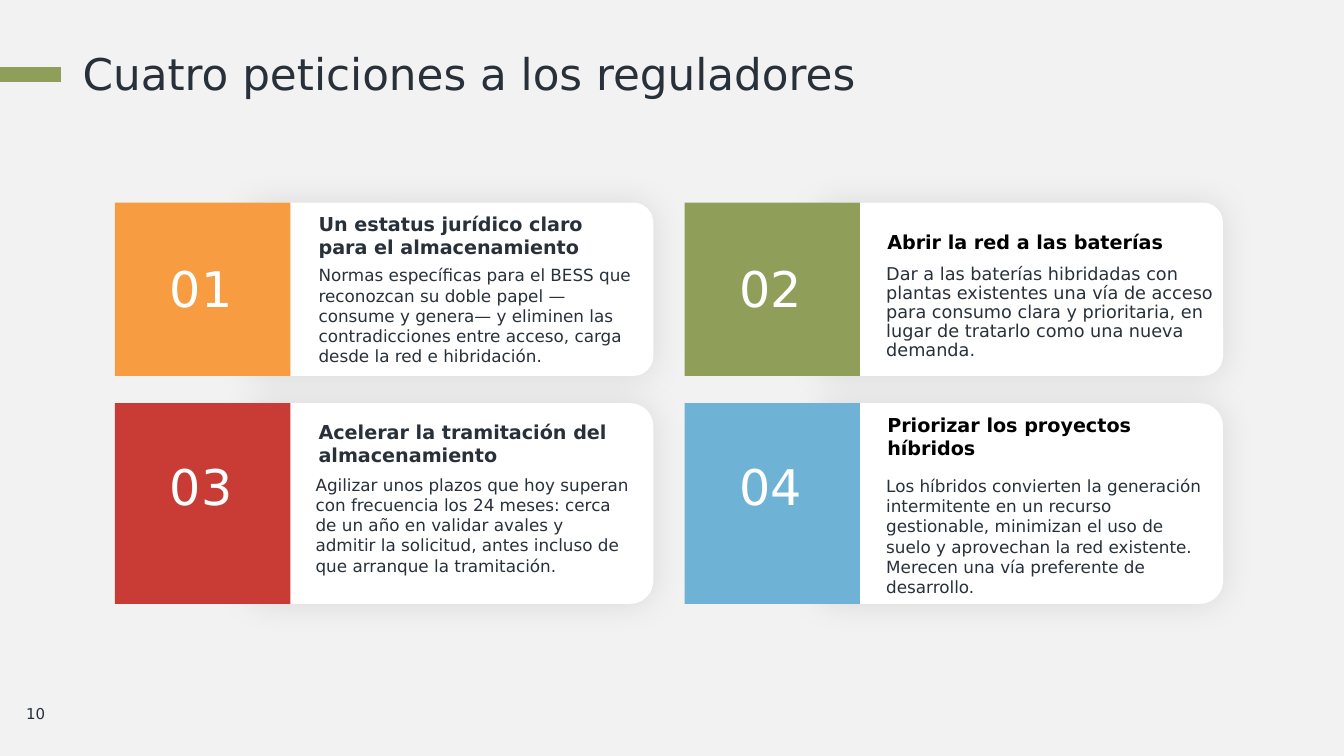
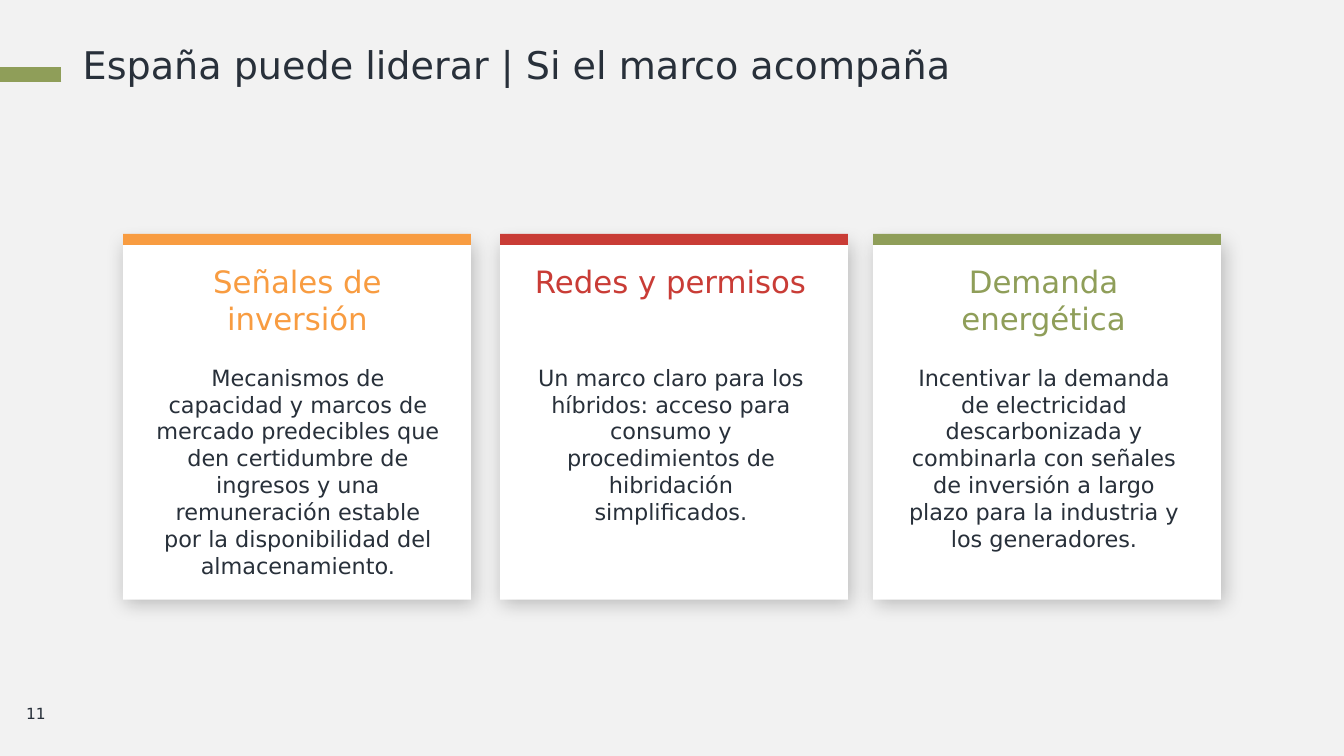
import pptx
import pptx.util
import pptx.dml.color
import pptx.enum.shapes
import pptx.enum.text
import pptx.oxml

Inches = pptx.util.Inches
Kind = pptx.enum.shapes.MSO_SHAPE
Align = pptx.enum.text.PP_ALIGN
Anchor = pptx.enum.text.MSO_ANCHOR

# Shared look
FACE = "DejaVu Sans"
HUES = {
    "back": "F2F2F2", "ink": "28303A", "black": "000000", "white": "FFFFFF",
    "orange": "F89C41", "red": "C93C36", "green": "8F9E59", "blue": "6EB3D6",
}
# Shadows: opacity %, blur pt, distance pt, angle in degrees
GLOW = (9, 23.9, 0, 0)
DROP = (23, 14, 3, 53)

# Content: title, title size, line spacing, page, page size
ASKS_TOP = ("Cuatro peticiones a los reguladores", 31.2, 1.0, "10", 10.7)
LEAD_TOP = ("España puede liderar | Si el marco acompaña", 27.2, 0.9, "11", 11)

# Requests, column by column; boxes are (offset from column, top, width, height)
ASKS = [
    {"num": "01", "hue": "orange", "col": 0, "row": 0,
     "head": "Un estatus jurídico claro para el almacenamiento",
     "head_box": (2.02, 2.11, 3.12, 0.48), "head_fmt": {},
     "body": "Normas específicas para el BESS que reconozcan su doble papel "
             "—consume y genera— y eliminen las contradicciones entre acceso, "
             "carga desde la red e hibridación.",
     "body_box": (2.02, 2.63, 3.18, 1.02), "body_fmt": {}},
    {"num": "03", "hue": "red", "col": 0, "row": 1,
     "head": "Acelerar la tramitación del almacenamiento",
     "head_box": (2.02, 4.1, 3.12, 0.59), "head_fmt": {"anchor": Anchor.MIDDLE},
     "body": "Agilizar unos plazos que hoy superan con frecuencia los 24 meses: "
             "cerca de un año en validar avales y admitir la solicitud, antes "
             "incluso de que arranque la tramitación.",
     "body_box": (1.99, 4.71, 3.11, 0.73), "body_fmt": {}},
    {"num": "02", "hue": "green", "col": 1, "row": 0,
     "head": "Abrir la red a las baterías",
     "head_box": (2.01, 2.29, 3.12, 0.27), "head_fmt": {"hue": "black"},
     "body": "Dar a las baterías hibridadas con plantas existentes una vía de "
             "acceso para consumo clara y prioritaria, en lugar de tratarlo "
             "como una nueva demanda.",
     "body_box": (2, 2.63, 3.26, 0.98), "body_fmt": {"size": 12.6, "gap": 0.9}},
    {"num": "04", "hue": "blue", "col": 1, "row": 1,
     "head": "Priorizar los proyectos híbridos",
     "head_box": (2.01, 4.1, 3.12, 0.86), "head_fmt": {"hue": "black"},
     "body": "Los híbridos convierten la generación intermitente en un recurso "
             "gestionable, minimizan el uso de suelo y aprovechan la red "
             "existente. Merecen una vía preferente de desarrollo.",
     "body_box": (2, 4.72, 3.13, 0.73), "body_fmt": {}},
]
COLS = (1.14, 6.79)
ROWS = ((2.01, 1.72, 2.46), (4, 1.99, 4.42))  # top, height, number top

# Pillars: card left, hue, heading, body
LEADS = [
    (1.22, "orange", "Señales de inversión",
     "Mecanismos de capacidad y marcos de mercado predecibles que den "
     "certidumbre de ingresos y una remuneración estable por la "
     "disponibilidad del almacenamiento."),
    (4.96, "red", "Redes y permisos",
     "Un marco claro para los híbridos: acceso para consumo y "
     "procedimientos de hibridación simplificados."),
    (8.66, "green", "Demanda energética",
     "Incentivar la demanda de electricidad descarbonizada y combinarla con "
     "señales de inversión a largo plazo para la industria y los generadores."),
]


def tint(name):
    return pptx.dml.color.RGBColor.from_string(HUES[name])


def node(xml):
    space = 'xmlns:a="http://schemas.openxmlformats.org/drawingml/2006/main"'
    return pptx.oxml.parse_xml(xml.replace(" ", f" {space} ", 1))


def write(slide, box, text, size, hue="ink", bold=False, align=None,
          anchor=Anchor.TOP, gap=None, inset=(0, 0)):
    frame = slide.shapes.add_textbox(*map(Inches, box)).text_frame
    across, down = map(Inches, inset)
    look = {"word_wrap": True, "vertical_anchor": anchor,
            "margin_left": across, "margin_right": across,
            "margin_top": down, "margin_bottom": down}
    for key, value in look.items():
        setattr(frame, key, value)
    para = frame.paragraphs[0]
    para.alignment = align
    para.line_spacing = gap
    run = para.add_run()
    run.text = text
    style = {"name": FACE, "size": pptx.util.Pt(size), "bold": bold}
    for key, value in style.items():
        setattr(run.font, key, value)
    run.font.color.rgb = tint(hue)


def block(slide, box, hue, kind=Kind.RECTANGLE, shade=None):
    shape = slide.shapes.add_shape(kind, *map(Inches, box))
    shape.shadow.inherit = False
    shape.fill.solid()
    shape.fill.fore_color.rgb = tint(hue)
    shape.line.fill.background()
    if shade:
        alpha, blur, dist, angle = shade
        effects = shape._element.spPr.find(pptx.oxml.ns.qn("a:effectLst"))
        effects.append(node(
            f'<a:outerShdw blurRad="{pptx.util.Pt(blur)}" '
            f'dist="{pptx.util.Pt(dist)}" dir="{angle * 60000}" '
            f'algn="ctr" rotWithShape="0"><a:srgbClr val="{HUES["black"]}">'
            f'<a:alpha val="{alpha * 1000}"/></a:srgbClr></a:outerShdw>'))
    return shape


def start(prs, title, size, gap, page, small):
    slide = prs.slides.add_slide(prs.slide_layouts[6])
    write(slide, (0.82, 0.46, 11.71, 0.54), title, size, gap=gap)
    # Accent bar at the left edge
    bar = slide.shapes.add_connector(
        pptx.enum.shapes.MSO_CONNECTOR.STRAIGHT,
        *map(Inches, (0.61, 0.74, 0, 0.74)))
    bar.line.color.rgb = tint("green")
    bar.line.width = pptx.util.Pt(10.25)
    bar._element.spPr.append(node("<a:effectLst />"))
    # Page number
    write(slide, (0.16, 6.88, 0.68, 0.4), page, small,
          anchor=Anchor.MIDDLE, inset=(0.1, 0.05))
    return slide


def asks(prs):
    slide = start(prs, *ASKS_TOP)
    for ask in ASKS:
        left = COLS[ask["col"]]
        top, high, mid = ROWS[ask["row"]]
        card = block(slide, (left + 1.3, top, 4.04, high), "white",
                     Kind.ROUNDED_RECTANGLE, GLOW)
        card.adjustments[0] = 0.115
        block(slide, (left, top, 1.74, high), ask["hue"])
        write(slide, (left + 0.42, mid, 0.87, 0.87), ask["num"], 35.1, "white",
              align=Align.CENTER, anchor=Anchor.MIDDLE, gap=0.9,
              inset=(0.04, 0.04))
        for part, base in (("head", {"size": 13.7, "bold": True}),
                           ("body", {"size": 12})):
            shift, *rest = ask[part + "_box"]
            write(slide, (left + shift, *rest), ask[part],
                  **{**base, **ask[part + "_fmt"]})


def leads(prs):
    slide = start(prs, *LEAD_TOP)
    for i, (left, hue, head, body) in enumerate(LEADS):
        block(slide, (left, 2.39, 3.45, 3.56), "white", shade=DROP)
        block(slide, (left, 2.32, 3.45, 0.11), hue)
        step = 3.7 * i
        write(slide, (1.48 + step, 2.61, 2.94, 0.8), head, 22, hue,
              align=Align.CENTER)
        write(slide, (1.55 + step, 3.61, 2.81, 1.71), body, 16,
              align=Align.CENTER)


def main():
    prs = pptx.Presentation()
    prs.slide_width, prs.slide_height = Inches(13.33), Inches(7.5)
    back = prs.slide_master.background.fill
    back.solid()
    back.fore_color.rgb = tint("back")
    asks(prs)
    leads(prs)
    prs.save("out.pptx")


if __name__ == "__main__":
    main()
